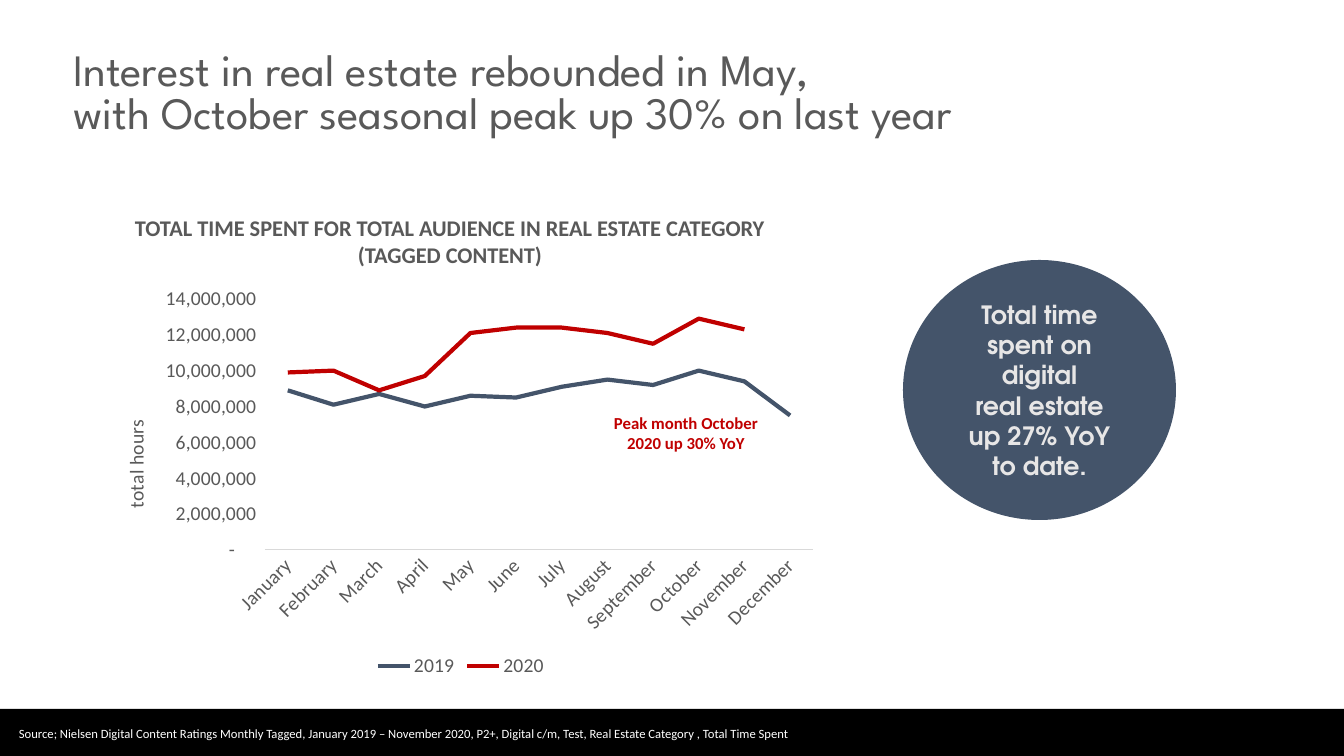
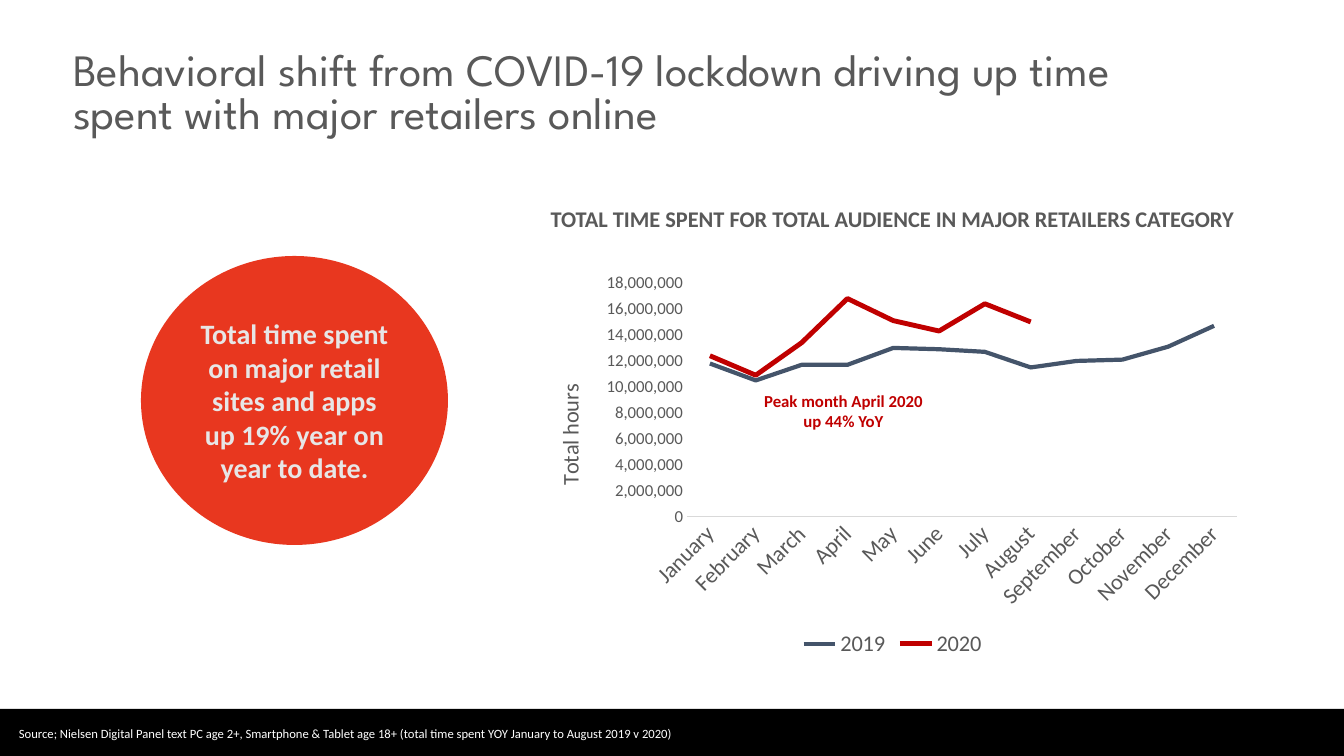
from lxml.etree import SubElement
from pptx import Presentation
from pptx.chart.data import CategoryChartData
from pptx.dml.color import RGBColor
from pptx.enum.chart import XL_CHART_TYPE, XL_LEGEND_POSITION, XL_TICK_MARK
from pptx.enum.shapes import MSO_SHAPE
from pptx.enum.text import MSO_ANCHOR, MSO_AUTO_SIZE, PP_ALIGN
from pptx.oxml.ns import qn
from pptx.util import Pt

# Shared measures, colours and fonts
PX_PER_INCH = 100.8
SLIDE_WIDTH, SLIDE_HEIGHT = 1344, 756
TITLE_BOX = (63, 25, 1152, 140)
BAND_BOX = (0, 709, 1344, 47)
SOURCE_BOX = (9, 721, 1095, 25)

BLACK = RGBColor(0x00, 0x00, 0x00)
WHITE = RGBColor(0xFF, 0xFF, 0xFF)
GREY = RGBColor(0x59, 0x59, 0x59)
AXIS_GREY = RGBColor(0xD9, 0xD9, 0xD9)
PALE = RGBColor(0xE7, 0xE6, 0xE6)
SLATE = RGBColor(0x44, 0x54, 0x6A)
RED = RGBColor(0xC0, 0x00, 0x00)
ORANGE = RGBColor(0xE8, 0x37, 0x1F)

BODY_FONT = "Calibri"
TITLE_FONT = "League Spartan"
ROUND_FONT = "TeX Gyre Adventor"

MONTHS = ["January", "February", "March", "April", "May", "June", "July",
          "August", "September", "October", "November", "December"]
MILLION = 1000000


def emu(px):
    return round(px * 914400 / PX_PER_INCH)


def to_emu(box):
    return [emu(length) for length in box]


def set_font(font, size, color, bold=False, name=BODY_FONT):
    font.name = name
    font.size = Pt(size)
    font.bold = bold
    font.color.rgb = color


def write(shape, text, size, color, align=PP_ALIGN.CENTER, bold=False, name=BODY_FONT):
    frame = shape.text_frame
    frame.word_wrap = True
    frame.text = text
    for paragraph in frame.paragraphs:
        paragraph.alignment = align
        set_font(paragraph.font, size, color, bold, name)


def add_text(slide, box, text, size, color, **style):
    write(slide.shapes.add_textbox(*to_emu(box)), text, size, color, **style)


def add_filled(slide, kind, box, color):
    shape = slide.shapes.add_shape(kind, *to_emu(box))
    shape.shadow.inherit = False
    shape.fill.solid()
    shape.fill.fore_color.rgb = color
    shape.line.fill.background()
    return shape


def add_circle(slide, box, color, text, size, name=BODY_FONT):
    circle = add_filled(slide, MSO_SHAPE.OVAL, box, color)
    circle.text_frame.vertical_anchor = MSO_ANCHOR.MIDDLE
    write(circle, text, size, PALE, bold=True, name=name)


def add_base_slide(presentation, title, source):
    """Add a slide with the shared title, black band and source line."""
    slide = presentation.slides.add_slide(presentation.slide_layouts[5])
    heading = slide.shapes.title
    heading.left, heading.top, heading.width, heading.height = to_emu(TITLE_BOX)
    write(heading, title, 32, GREY, align=PP_ALIGN.LEFT, name=TITLE_FONT)
    heading.text_frame.auto_size = MSO_AUTO_SIZE.NONE
    heading.text_frame.vertical_anchor = MSO_ANCHOR.MIDDLE
    for paragraph in heading.text_frame.paragraphs:
        paragraph.line_spacing = 0.8

    add_filled(slide, MSO_SHAPE.RECTANGLE, BAND_BOX, BLACK)
    add_text(slide, SOURCE_BOX, source, 9, WHITE, align=PP_ALIGN.LEFT)
    return slide


def set_layout(parent, index, chart_box, left, top, size=None):
    """Place a chart part at slide coordinates, as fractions of the chart."""
    for layout in parent.findall(qn("c:layout")):
        parent.remove(layout)
    layout = SubElement(parent, qn("c:layout"))
    parent.insert(index, layout)
    manual = SubElement(layout, qn("c:manualLayout"))
    chart_left, chart_top, chart_width, chart_height = chart_box
    settings = {"xMode": "edge", "yMode": "edge",
                "x": (left - chart_left) / chart_width,
                "y": (top - chart_top) / chart_height}
    if size:
        settings = {"layoutTarget": "inner", **settings,
                    "w": size[0] / chart_width, "h": size[1] / chart_height}
    for tag, value in settings.items():
        text = value if isinstance(value, str) else f"{value:.4f}"
        SubElement(manual, qn(f"c:{tag}")).set("val", text)


def set_rotation(element, degrees):
    body = element.find(".//" + qn("a:bodyPr"))
    body.set("rot", str(degrees * 60000))
    body.set("vert", "horz")


def add_line_chart(slide, box, plot_box, series, axis_title, title_at, maximum,
                   number_format, size, value_size):
    """Series are (name, values in millions, colour, line width)."""
    data = CategoryChartData()
    data.categories = MONTHS
    for name, values, _, _ in series:
        padded = values + [None] * (len(MONTHS) - len(values))
        data.add_series(name, [None if value is None else round(value * MILLION)
                               for value in padded])
    chart = slide.shapes.add_chart(XL_CHART_TYPE.LINE, *to_emu(box), data).chart
    chart.has_title = False
    set_font(chart.font, 10, BLACK)

    plot = chart.plots[0]
    plot.vary_by_categories = False
    for line, (_, _, color, width) in zip(plot.series, series):
        line.smooth = False
        line.format.line.color.rgb = color
        line.format.line.width = Pt(width)

    # Legend
    chart.has_legend = True
    chart.legend.position = XL_LEGEND_POSITION.BOTTOM
    chart.legend.include_in_layout = False
    set_font(chart.legend.font, size, GREY)

    # Axes
    months, hours = chart.category_axis, chart.value_axis
    for axis, label_size in ((months, size), (hours, value_size)):
        axis.has_major_gridlines = False
        axis.major_tick_mark = axis.minor_tick_mark = XL_TICK_MARK.NONE
        set_font(axis.tick_labels.font, label_size, GREY)
    months.format.line.color.rgb = AXIS_GREY
    months.format.line.width = Pt(0.75)
    set_rotation(months.tick_labels.font and months._element.find(qn("c:txPr")), -45)

    hours.format.line.fill.background()
    hours.minimum_scale, hours.maximum_scale = 0, maximum * MILLION
    hours.major_unit = 2 * MILLION
    hours.tick_labels.number_format = number_format
    hours.tick_labels.number_format_is_linked = False

    # Axis title and plot position
    title = hours.axis_title
    title.text_frame.text = axis_title
    set_font(title.text_frame.paragraphs[0].font, size, GREY)
    title_element = hours._element.find(qn("c:title"))
    set_rotation(title_element, -90)
    set_layout(title_element, 1, box, *title_at)
    plot_area = chart._chartSpace.find(".//" + qn("c:plotArea"))
    set_layout(plot_area, 0, box, *plot_box[:2], size=plot_box[2:])


def build_real_estate(presentation):
    slide = add_base_slide(
        presentation,
        "Interest in real estate rebounded in May,\v"
        "with October seasonal peak up 30% on last year",
        "Source; Nielsen Digital Content Ratings Monthly Tagged, January 2019 – November 2020, "
        "P2+, Digital c/m, Test, Real Estate Category , Total Time Spent")
    add_text(slide, (93, 209, 714, 65),
             "TOTAL TIME SPENT FOR TOTAL AUDIENCE IN REAL ESTATE CATEGORY\n(TAGGED CONTENT)",
             16, GREY, bold=True)
    add_line_chart(
        slide, (93, 278, 736, 404), (265, 299, 548, 251),
        [("2019", [8.9, 8.1, 8.7, 8, 8.6, 8.5, 9.1, 9.5, 9.2, 10, 9.4, 7.5], SLATE, 3),
         ("2020", [9.9, 10, 8.9, 9.7, 12.1, 12.4, 12.4, 12.1, 11.5, 12.9, 12.3], RED, 3)],
        "total hours", (119, 416), 14,
        '_-* #,##0_-;\\-* #,##0_-;_-* "-"??_-;_-@_', 14, 14)
    add_circle(slide, (903, 260, 273, 260), SLATE,
               "Total time spent on digital\vreal estate\vup 27% YoY\vto date.", 18, ROUND_FONT)
    add_text(slide, (596, 408, 180, 50), "Peak month October 2020 up 30% YoY",
             12, RED, bold=True)


def build_retailers(presentation):
    slide = add_base_slide(
        presentation,
        "Behavioral shift from COVID-19 lockdown driving up time spent with major retailers online",
        "Source; Nielsen Digital Panel text PC age 2+, Smartphone & Tablet age 18+ "
        "(total time spent YOY January to August 2019 v 2020)")
    add_text(slide, (533, 200, 719, 37),
             "TOTAL TIME SPENT FOR TOTAL AUDIENCE IN MAJOR RETAILERS CATEGORY",
             16, GREY, bold=True)
    add_line_chart(
        slide, (533, 265, 719, 397), (687, 283, 550, 234),
        [("2019", [11.8, 10.5, 11.7, 11.7, 13, 12.9, 12.7, 11.5, 12, 12.1, 13.1, 14.7],
          SLATE, 3),
         ("2020", [12.4, 10.9, 13.4, 16.8, 15.1, 14.3, 16.4, 15], RED, 3.5)],
        "Total hours", (551, 380), 18, "#,##0", 16, 12)
    add_circle(slide, (141, 256, 307, 289), ORANGE,
               "Total time spent on major retail sites and apps up 19% year on year to date.", 20)
    add_text(slide, (747, 386, 193, 50), "Peak month April 2020 up 44% YoY",
             12, RED, bold=True)


def main():
    presentation = Presentation()
    presentation.slide_width = emu(SLIDE_WIDTH)
    presentation.slide_height = emu(SLIDE_HEIGHT)
    build_real_estate(presentation)
    build_retailers(presentation)
    presentation.save("out.pptx")


if __name__ == "__main__":
    main()
